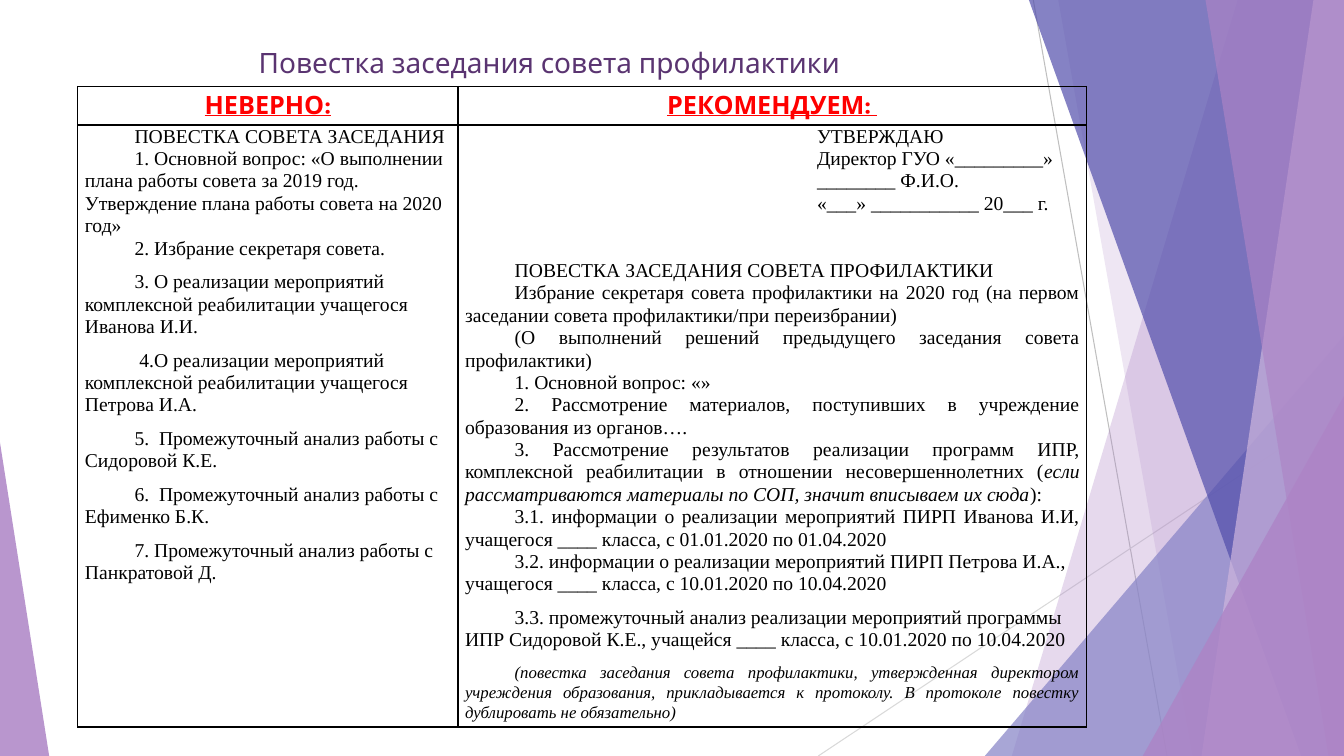
"""Build a slide that compares two agendas of a prevention council meeting."""
from dataclasses import dataclass, replace
from typing import Optional, Union

from lxml import etree
from pptx import Presentation
from pptx.dml.color import RGBColor
from pptx.enum import shapes, text
from pptx.oxml import ns
from pptx.util import Cm, Pt

WIDTH, HEIGHT = 33.87, 19.05
BLACK = RGBColor(0x00, 0x00, 0x00)
RED = RGBColor(0xFF, 0x00, 0x00)
PLUM = RGBColor(0x5A, 0x34, 0x71)
VIOLET = RGBColor(0xAD, 0x84, 0xC6)
LILAC = RGBColor(0xCE, 0xB5, 0xDD)
INDIGO = RGBColor(0x52, 0x4E, 0xAB)
PERIWINKLE = RGBColor(0x87, 0x84, 0xC7)
GREY = RGBColor(0xBF, 0xBF, 0xBF)
PALE_GREY = RGBColor(0xD9, 0xD9, 0xD9)
LEFT, CENTER, JUSTIFY = text.PP_ALIGN.LEFT, text.PP_ALIGN.CENTER, text.PP_ALIGN.JUSTIFY


@dataclass(frozen=True)
class Ray:
    start: tuple[float, float]
    end: tuple[float, float]
    color: RGBColor


@dataclass(frozen=True)
class Veil:
    top: float
    bottom: float
    color: RGBColor
    opacity: int


@dataclass(frozen=True)
class Wedge:
    left: float
    top: float
    width: float
    lean: float
    color: RGBColor
    opacity: int


@dataclass(frozen=True)
class Item:
    words: str
    align: text.PP_ALIGN = LEFT
    margin: float = 0
    before: float = 0
    after: float = 0
    spacing: Union[Pt, float] = Pt(16)
    size: float = 14


DECOR = [
    Ray((26.04, 0), (29.41, HEIGHT), GREY),
    Ray((WIDTH, 10.24), (20.62, HEIGHT), PALE_GREY),
    Veil(31.19, 25.5, VIOLET, 30),
    Veil(26.67, 30.05, VIOLET, 20),
    Wedge(24.82, 8.46, 9.05, 1, PERIWINKLE, 72),
    Veil(25.93, 32.79, INDIGO, 70),
    Veil(33.1, 30.28, LILAC, 70),
    Veil(30.38, 33.48, VIOLET, 65),
    Wedge(28.8, 9.98, 5.07, 1, VIOLET, 80),
    Wedge(0, 11.15, 1.24, 0, VIOLET, 85),
]

HEADERS = ["НЕВЕРНО:", "РЕКОМЕНДУЕМ: "]
WRONG = [
    Item("ПОВЕСТКА СОВЕТА ЗАСЕДАНИЯ"),
    Item("1. Основной вопрос: «О выполнении плана работы совета за 2019 год. "
         "Утверждение плана работы совета на 2020 год»"),
] + [Item(words, after=8) for words in (
    "2. Избрание секретаря совета.",
    "3. О реализации мероприятий комплексной реабилитации учащегося Иванова И.И.",
    " 4.О реализации мероприятий комплексной реабилитации учащегося Петрова И.А.",
    "5.  Промежуточный анализ работы с Сидоровой К.Е.",
    "6.  Промежуточный анализ работы с Ефименко Б.К.",
    "7. Промежуточный анализ работы с Панкратовой Д.",
)]
APPROVAL = [Item(words, margin=7.62) for words in (
    "УТВЕРЖДАЮ",
    "Директор ГУО «_________»",
    "________ Ф.И.О.",
    "«___» ___________ 20___ г.",
)]
AGENDA = [Item(words, JUSTIFY) for words in (
    "ПОВЕСТКА ЗАСЕДАНИЯ СОВЕТА ПРОФИЛАКТИКИ",
    "Избрание секретаря совета профилактики на 2020 год (на первом заседании "
    "совета профилактики/при переизбрании)",
    "(О выполнений решений предыдущего заседания совета профилактики)",
    "1. Основной вопрос: «»",
    "2. Рассмотрение материалов, поступивших в учреждение образования из органов….",
    "3. Рассмотрение результатов реализации программ ИПР, комплексной реабилитации "
    "в отношении несовершеннолетних (*если рассматриваются материалы по СОП, "
    "значит вписываем их сюда*):",
    "3.1. информации о реализации мероприятий ПИРП Иванова И.И, учащегося ____ "
    "класса, с 01.01.2020 по 01.04.2020",
)]
AGENDA[0] = replace(AGENDA[0], before=32)
CLOSING = [
    Item("3.2. информации о реализации мероприятий ПИРП Петрова И.А., учащегося ____ "
         "класса, с 10.01.2020 по 10.04.2020", after=8),
    Item("3.3. промежуточный анализ реализации мероприятий программы ИПР Сидоровой К.Е., "
         "учащейся ____ класса, с 10.01.2020 по 10.04.2020", after=8),
    Item("*(повестка заседания совета профилактики, утвержденная директором учреждения "
         "образования, прикладывается к протоколу. В протоколе повестку дублировать "
         "не обязательно)*", JUSTIFY, spacing=1.07, size=12),
]
COLUMNS = [WRONG, APPROVAL + AGENDA + CLOSING]


def write(para, words: str, *, font: str, size: float, color: RGBColor,
          align: text.PP_ALIGN = CENTER, bold: bool = False,
          underline: bool = False) -> None:
    """Fill a paragraph; asterisks enclose italic words."""
    para.alignment = align
    for number, part in enumerate(words.split("*")):
        if part:
            span = para.add_run()
            span.text = part
            span.font.name, span.font.size = font, Pt(size)
            span.font.color.rgb = color
            span.font.bold, span.font.underline = bold, underline
            span.font.italic = number % 2 == 1


def draw_ray(page, ray: Ray) -> None:
    """Draw a thin line without a shadow."""
    ends = [Cm(value) for value in ray.start + ray.end]
    line = page.shapes.add_connector(shapes.MSO_CONNECTOR.STRAIGHT, *ends)
    line.line.color.rgb, line.line.width = ray.color, Pt(0.75)
    etree.SubElement(line._element.spPr, ns.qn("a:effectLst"))


def draw_facet(page, facet: Union[Veil, Wedge]) -> None:
    """Draw a translucent facet."""
    if isinstance(facet, Veil):
        builder = page.shapes.build_freeform(Cm(facet.top), 0)
        corners = [(WIDTH, 0), (WIDTH, HEIGHT), (facet.bottom, HEIGHT)]
        builder.add_line_segments([(Cm(x), Cm(y)) for x, y in corners], close=True)
        shape = builder.convert_to_shape()
    else:
        shape = page.shapes.add_shape(
            shapes.MSO_SHAPE.ISOSCELES_TRIANGLE, Cm(facet.left), Cm(facet.top),
            Cm(facet.width), Cm(HEIGHT - facet.top))
        shape.adjustments[0] = facet.lean
    shape.shadow.inherit = False
    shape.line.fill.background()
    shape.fill.solid()
    shape.fill.fore_color.rgb = facet.color
    tint = shape._element.spPr.find(ns.qn("a:solidFill"))[0]
    etree.SubElement(tint, ns.qn("a:alpha"), val=str(facet.opacity * 1000))


def prepare_cell(cell, anchor: Optional[text.MSO_ANCHOR] = None) -> None:
    """Set margins, black borders and an empty fill."""
    cell.margin_left = cell.margin_right = Cm(0.18)
    cell.margin_top = cell.margin_bottom = 0
    cell.vertical_anchor = anchor
    props = cell._tc.get_or_add_tcPr()
    for side in ("lnL", "lnR", "lnT", "lnB"):
        border = etree.SubElement(props, ns.qn(f"a:{side}"), w=str(Pt(1)))
        fill = etree.SubElement(border, ns.qn("a:solidFill"))
        etree.SubElement(fill, ns.qn("a:srgbClr"), val=str(BLACK))
    cell.fill.background()


def fill_body(cell, items: list[Item]) -> None:
    """Write the agenda items into a cell."""
    frame = cell.text_frame
    for number, item in enumerate(items):
        para = frame.add_paragraph() if number else frame.paragraphs[0]
        write(para, item.words, font="Times New Roman", size=item.size,
              color=BLACK, align=item.align)
        para.line_spacing = item.spacing
        para.space_before, para.space_after = Pt(item.before), Pt(item.after)
        props = para._p.get_or_add_pPr()
        props.set("marL", str(Cm(item.margin)))
        props.set("indent", str(Cm(1.25)))


def main() -> None:
    """Build and save the deck."""
    deck = Presentation()
    deck.slide_width, deck.slide_height = Cm(WIDTH), Cm(HEIGHT)
    page = deck.slides.add_slide(deck.slide_layouts[6])
    for piece in DECOR:
        (draw_ray if isinstance(piece, Ray) else draw_facet)(page, piece)

    box = page.shapes.add_textbox(Cm(1.9), Cm(1.02), Cm(23.88), Cm(0.81))
    box.text_frame.word_wrap = True
    write(box.text_frame.paragraphs[0], "Повестка заседания совета профилактики",
          font="Karla", size=20, color=PLUM)

    table = page.shapes.add_table(2, 2, Cm(1.96), Cm(2.18), Cm(25.43), Cm(16.01)).table
    table.first_row = table.horz_banding = False
    table.rows[0].height, table.rows[1].height = Cm(0.97), Cm(15.04)
    for number, width in enumerate((9.58, 15.85)):
        table.columns[number].width = Cm(width)
        header, body = table.cell(0, number), table.cell(1, number)
        prepare_cell(header, text.MSO_ANCHOR.MIDDLE)
        write(header.text_frame.paragraphs[0], HEADERS[number], font="Karla",
              size=18, color=RED, bold=True, underline=True)
        prepare_cell(body)
        fill_body(body, COLUMNS[number])
    deck.save("out.pptx")


if __name__ == "__main__":
    main()
